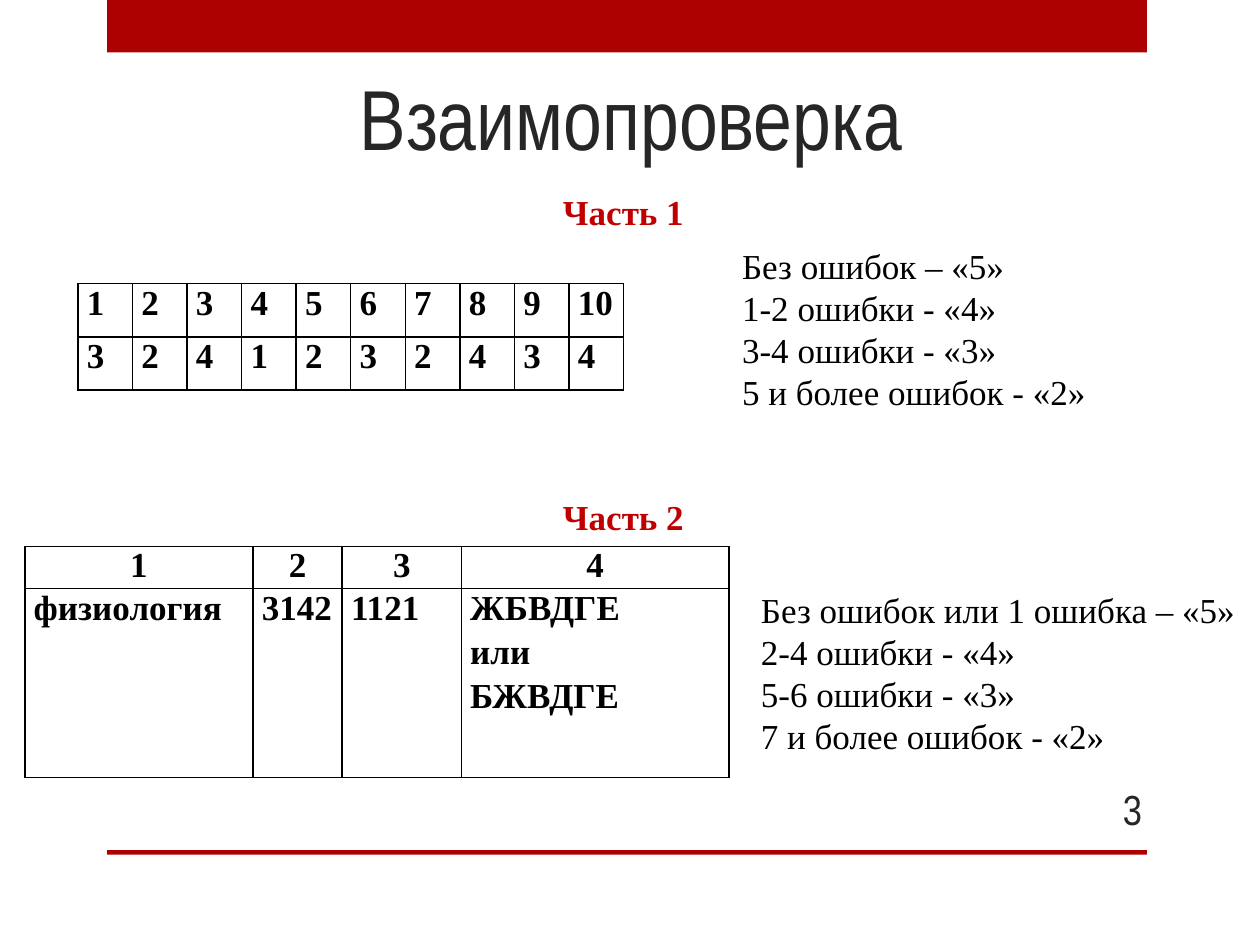
from lxml.etree import SubElement
from pptx import Presentation
from pptx.dml.color import RGBColor
from pptx.enum.shapes import MSO_SHAPE
from pptx.enum.text import MSO_ANCHOR, PP_ALIGN
from pptx.oxml.ns import qn
from pptx.util import Cm, Pt

BAND_RED = RGBColor(0xAD, 0x01, 0x01)
HEADING_RED = RGBColor(0xC0, 0x00, 0x00)
DARK_GREY = RGBColor(0x26, 0x26, 0x26)
BLACK = RGBColor(0x00, 0x00, 0x00)
SERIF = "Times New Roman"
NARROW = "Arial Narrow"


def write_text(frame, text, *, size=20, font=SERIF, color=BLACK, bold=False,
               align=PP_ALIGN.LEFT, space_before=0):
    """Fill a text frame, one paragraph for each line of the text."""
    for index, line in enumerate(text.split("\n")):
        paragraph = frame.add_paragraph() if index else frame.paragraphs[0]
        paragraph.alignment = align
        paragraph.space_before = Pt(space_before)
        run = paragraph.add_run()
        run.text = line
        run.font.size = Pt(size)
        run.font.name = font
        run.font.bold = bold
        run.font.color.rgb = color


def add_band(slide, top, height):
    band = slide.shapes.add_shape(MSO_SHAPE.RECTANGLE, Cm(2.16), Cm(top), Cm(20.96), Cm(height))
    band.shadow.inherit = False
    band.fill.solid()
    band.fill.fore_color.rgb = BAND_RED
    band.line.fill.background()


def add_text(slide, text, left, top, width, height, *, anchor=MSO_ANCHOR.TOP, wrap=True, **style):
    box = slide.shapes.add_textbox(Cm(left), Cm(top), Cm(width), Cm(height))
    box.text_frame.word_wrap = wrap
    box.text_frame.vertical_anchor = anchor
    write_text(box.text_frame, text, **style)


def add_cell_borders(cell):
    properties = cell._tc.get_or_add_tcPr()
    for side in ("a:lnL", "a:lnR", "a:lnT", "a:lnB"):
        line = SubElement(properties, qn(side), w=str(Pt(1)))
        fill = SubElement(line, qn("a:solidFill"))
        SubElement(fill, qn("a:srgbClr"), val=str(BLACK))


def add_answer_table(slide, rows, left, top, widths, heights, header_align):
    frame = slide.shapes.add_table(len(rows), len(widths), Cm(left), Cm(top),
                                   Cm(sum(widths)), Cm(sum(heights)))
    table = frame.table
    table.first_row = table.horz_banding = False
    for column, width in zip(table.columns, widths):
        column.width = Cm(width)
    for row, height in zip(table.rows, heights):
        row.height = Cm(height)
    for row_index, row in enumerate(rows):
        for column_index, text in enumerate(row):
            cell = table.cell(row_index, column_index)
            cell.margin_left = cell.margin_right = Cm(0.18)
            cell.margin_top = cell.margin_bottom = 0
            add_cell_borders(cell)
            cell.fill.background()
            align = PP_ALIGN.JUSTIFY if row_index else header_align
            write_text(cell.text_frame, text, bold=True, align=align, space_before=3)


def main():
    presentation = Presentation()
    presentation.slide_width, presentation.slide_height = Cm(25.4), Cm(19.05)
    slide = presentation.slides.add_slide(presentation.slide_layouts[6])

    add_band(slide, 0, 1.06)
    add_band(slide, 17.14, 0.09)
    add_text(slide, "Взаимопроверка", 3.3, 1.12, 18.85, 2.39, size=48.6, font=NARROW,
             color=DARK_GREY, align=PP_ALIGN.CENTER, anchor=MSO_ANCHOR.BOTTOM)
    add_text(slide, "3", 21.16, 15.8, 2.11, 1.02, size=24, font=NARROW,
             color=DARK_GREY, align=PP_ALIGN.RIGHT, anchor=MSO_ANCHOR.MIDDLE)
    for heading, top in (("Часть 1", 3.71), ("Часть 2", 9.86)):
        add_text(slide, heading, 11.1, top, 2.97, 1.12, wrap=False, color=HEADING_RED, bold=True)

    add_answer_table(slide, [[str(number) for number in range(1, 11)], "3241232434"],
                     1.57, 5.72, [1.1] * 10, [1.07] * 2, PP_ALIGN.JUSTIFY)
    add_text(slide, "Без ошибок – «5»\n1-2 ошибки - «4»\n3-4 ошибки - «3»\n"
                    "5 и более ошибок - «2»", 14.71, 4.8, 10.19, 3.68)

    add_answer_table(slide, ["1234", ["физиология", "3142", "1121", "ЖБВДГЕ\nили\nБЖВДГЕ"]],
                     0.5, 11.02, [4.6, 1.8, 2.4, 5.4], [0.84, 3.81], PP_ALIGN.CENTER)
    add_text(slide, "Без ошибок или 1 ошибка – «5»\n2-4 ошибки - «4»\n5-6 ошибки - «3»\n"
                    "7 и более ошибок - «2»", 15.09, 11.73, 10.31, 3.68)

    presentation.save("out.pptx")


if __name__ == "__main__":
    main()
